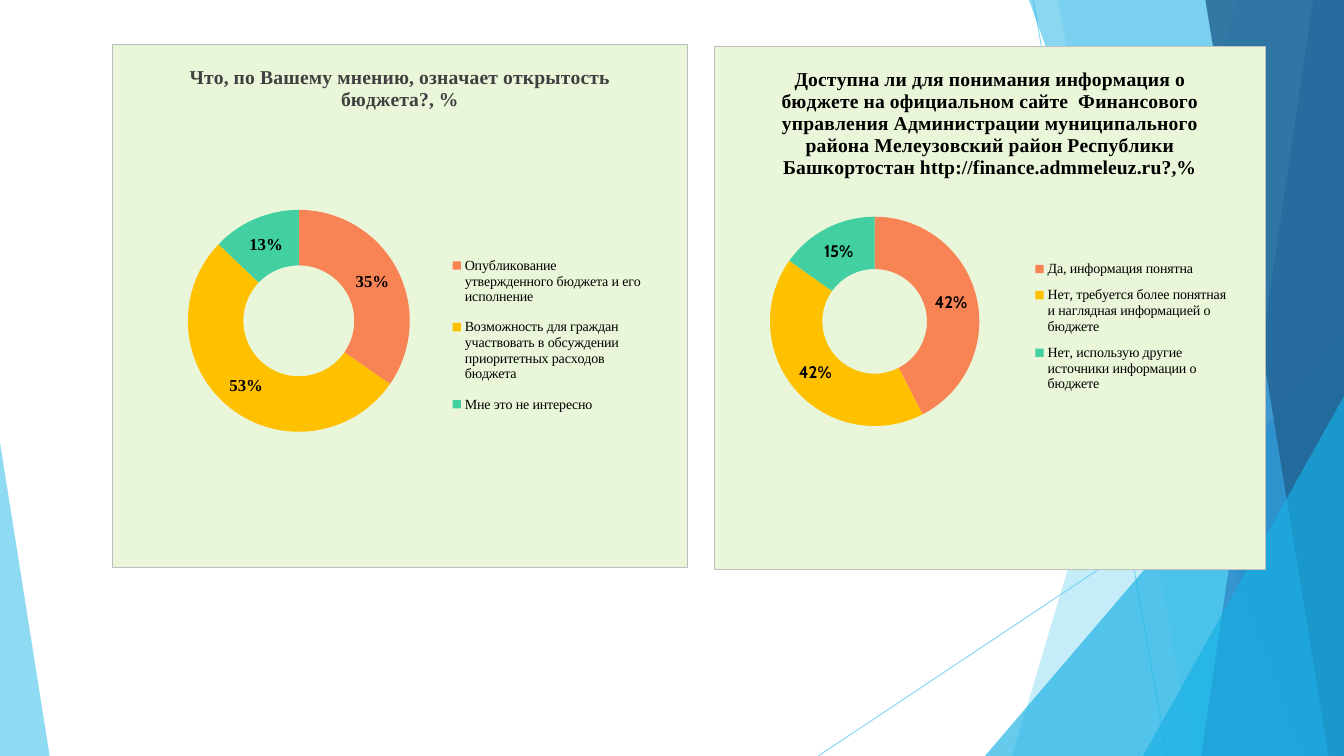
"""Build a slide with two survey doughnut charts on a faceted background."""
from lxml.etree import SubElement
from pptx import Presentation
from pptx.chart.data import CategoryChartData
from pptx.dml.color import RGBColor
from pptx.enum.chart import XL_CHART_TYPE, XL_LEGEND_POSITION
from pptx.enum.shapes import MSO_CONNECTOR, MSO_SHAPE
from pptx.oxml import parse_xml
from pptx.oxml.ns import nsdecls, qn
from pptx.util import Pt

WIDE, HIGH = 960, 540
THEME = {
    "sky": "5FCBEF", "aqua": "17B0E4", "blue": "2E83C3", "navy": "226292",
    "card": "EAF6D9", "edge": "BFBFBF", "black": "000000", "gray": "404040",
    "parts": ["F88456", "FFC000", "42D0A2"],
    "serif": "Times New Roman", "sans": "Cabin",
    "title": 14, "label": 12, "key": 10,
}
RAYS = [((738, 0), (833.75, HIGH)), ((WIDE, 290), (584.5, HIGH))]
FACETS = [
    ("band", (884, 723), "sky", 36),
    ("band", (756, 852), "sky", 20),
    ("wedge", (703.5, 240, 256.5, 300, 1), "aqua", 66),
    ("band", (735, 929.5), "aqua", 50),
    ("band", (938, 858), "blue", 70),
    ("band", (861, 949), "navy", 80),
    ("wedge", (816.5, 283, 143.5, 257, 1), "aqua", 66),
    ("wedge", (0, 316, 35.5, 224, 0), "sky", 70),
]
POLLS = [
    {
        "title": "Что, по Вашему мнению, означает открытость бюджета?, %",
        "answers": {
            "Опубликование утвержденного бюджета и его исполнение": 35,
            "Возможность для граждан участвовать в обсуждении "
            "приоритетных расходов бюджета": 53,
            "Мне это не интересно": 13,
        },
        "box": (80, 31.5, 411.5, 374.5), "ink": "gray", "face": "serif",
        "plot": (0.083, 0.316, 0.482, 0.424), "key": (0.59, 0.38, 0.33, 0.35),
    },
    {
        "title": "Доступна ли для понимания информация о бюджете на официальном "
                 "сайте  Финансового управления Администрации муниципального "
                 "района Мелеузовский район Республики Башкортостан "
                 "http://finance.admmeleuz.ru?,%",
        "answers": {
            "Да, информация понятна": 42,
            "Нет, требуется более понятная и наглядная "
            "информацией о бюджете": 42,
            "Нет, использую другие источники информации о бюджете": 15,
        },
        "box": (510, 33, 394.5, 374.5), "ink": "black", "face": "sans",
        "plot": (0.062, 0.325, 0.457, 0.4), "key": (0.58, 0.39, 0.35, 0.29),
    },
]


def put(item, values):
    """Set each named value on an item."""
    for name, value in values.items():
        setattr(item, name, value)


def style(font, size, face, ink="black", bold=False):
    """Format a font from the theme."""
    put(font, {"size": Pt(THEME[size]), "name": THEME[face], "bold": bold})
    font.color.rgb = RGBColor.from_string(THEME[ink])


def fade(fill, alpha):
    """Make a solid fill or line element partly clear."""
    color = next(fill.iter(qn("a:srgbClr")))
    SubElement(color, qn("a:alpha")).set("val", str(alpha * 1000))


def draw_ray(shapes, start, end):
    """Draw one thin background line."""
    ray = shapes.add_connector(
        MSO_CONNECTOR.STRAIGHT, *map(Pt, start + end))
    ray.line.width = Pt(0.75)
    ray.line.color.rgb = RGBColor.from_string(THEME["sky"])
    props = ray._element.spPr
    fade(props, 70)
    SubElement(props, qn("a:effectLst"))


def draw_facet(shapes, kind, spot, color, alpha):
    """Draw a band to the right edge or a right-angled wedge."""
    if kind == "band":
        top, base = spot
        pen = shapes.build_freeform(top, 0, scale=Pt(1))
        pen.add_line_segments([(WIDE, 0), (WIDE, HIGH), (base, HIGH)])
        facet = pen.convert_to_shape()
    else:
        *box, tip = spot
        facet = shapes.add_shape(MSO_SHAPE.ISOSCELES_TRIANGLE, *map(Pt, box))
        facet.adjustments[0] = tip
    facet.shadow.inherit = False
    facet.line.fill.background()
    facet.fill.solid()
    facet.fill.fore_color.rgb = RGBColor.from_string(THEME[color])
    fade(facet._element.spPr, alpha)


def place(owner, box, inner=False):
    """Give a chart part a fixed place, as shares of the chart."""
    for old in owner.findall(qn("c:layout")):
        owner.remove(old)
    target = '<c:layoutTarget val="inner"/>' if inner else ""
    modes = "".join(f'<c:{side}Mode val="edge"/>' for side in "xy")
    sizes = "".join(f'<c:{side} val="{share}"/>' for side, share in zip("xywh", box))
    layout = parse_xml(
        f'<c:layout {nsdecls("c")}><c:manualLayout>{target}{modes}{sizes}'
        '</c:manualLayout></c:layout>')
    if inner:
        owner.insert(0, layout)
    else:
        owner.find(qn("c:legendPos")).addnext(layout)


def draw_poll(shapes, poll):
    """Draw one poll as a doughnut chart on a tinted card."""
    data = CategoryChartData()
    data.categories = list(poll["answers"])
    data.add_series("Series 1", poll["answers"].values())
    chart = shapes.add_chart(
        XL_CHART_TYPE.DOUGHNUT, *map(Pt, poll["box"]), data).chart
    style(chart.font, "key", "serif")
    put(chart, {"has_title": True, "has_legend": True})

    frame = chart.chart_title.text_frame
    frame.text = poll["title"]
    style(frame.paragraphs[0].runs[0].font, "title", "serif", poll["ink"], True)

    legend = chart.legend
    put(legend, {"position": XL_LEGEND_POSITION.RIGHT, "include_in_layout": False})
    style(legend.font, "key", "serif")
    place(legend._element, poll["key"])

    plot = chart.plots[0]
    put(plot, {"vary_by_categories": True, "has_data_labels": True})
    labels = plot.data_labels
    put(labels, {"show_value": True, "show_percentage": False,
                 "number_format": '0"%"', "number_format_is_linked": False})
    style(labels.font, "label", poll["face"], bold=True)
    for spot, color in enumerate(THEME["parts"]):
        part = plot.series[0].points[spot].format
        part.fill.solid()
        part.fill.fore_color.rgb = RGBColor.from_string(color)
        part.line.fill.background()

    root = chart._chartSpace
    place(root.chart.plotArea, poll["plot"], inner=True)
    root.chart.addnext(parse_xml(
        f'<c:spPr {nsdecls("c", "a")}>'
        f'<a:solidFill><a:srgbClr val="{THEME["card"]}"/></a:solidFill>'
        f'<a:ln w="{Pt(0.75)}"><a:solidFill><a:srgbClr val="{THEME["edge"]}"/>'
        '</a:solidFill></a:ln></c:spPr>'))


def main():
    """Build and save the slide."""
    deck = Presentation()
    put(deck, {"slide_width": Pt(WIDE), "slide_height": Pt(HIGH)})
    shapes = deck.slides.add_slide(deck.slide_layouts[6]).shapes
    for ray in RAYS:
        draw_ray(shapes, *ray)
    for facet in FACETS:
        draw_facet(shapes, *facet)
    for poll in POLLS:
        draw_poll(shapes, poll)
    deck.save("out.pptx")


if __name__ == "__main__":
    main()
